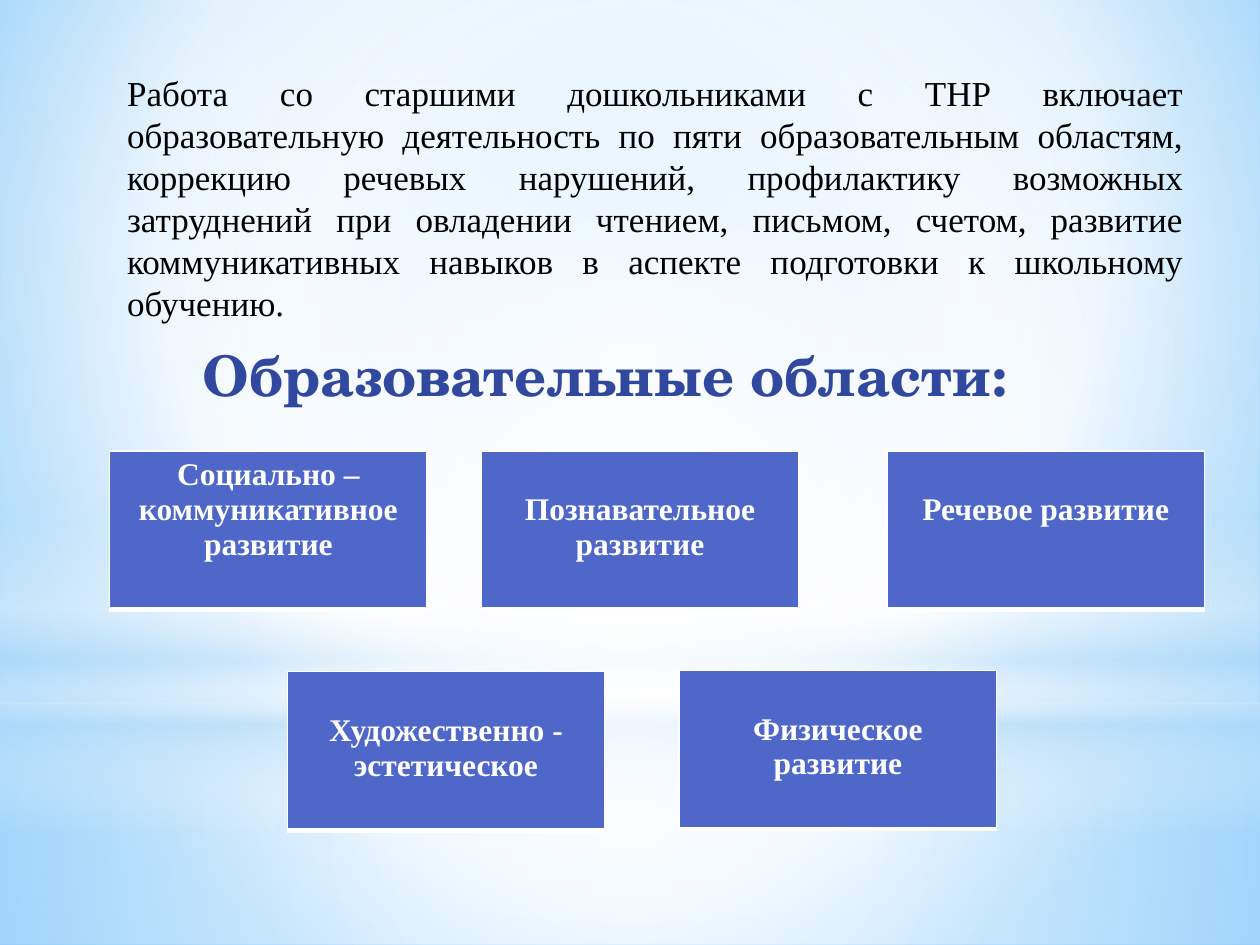
from lxml import etree
from pptx import Presentation
from pptx.dml.color import RGBColor
from pptx.enum import shapes, text
from pptx.oxml import ns
from pptx.util import Inches, Pt

# Content
INTRO = (
    "Работа со старшими дошкольниками с ТНР включает образовательную деятельность "
    "по пяти образовательным областям, коррекцию речевых нарушений, профилактику "
    "возможных затруднений при овладении чтением, письмом, счетом, развитие "
    "коммуникативных навыков в аспекте подготовки к школьному обучению."
)
TITLE = "Образовательные области:"
# Paragraphs, left, top, blank lines above the text
AREAS = [
    (["Социально – коммуникативное", "развитие"], 0.87, 3.58, 0),
    (["Познавательное развитие"], 3.82, 3.58, 1),
    (["Речевое развитие"], 7.04, 3.58, 1),
    (["Художественно - эстетическое"], 2.28, 5.33, 1),
    (["Физическое развитие"], 5.39, 5.32, 1),
]

THEME = {
    "body_font": "Times New Roman", "title_font": "TeX Gyre Schola",
    "black": "000000", "white": "FFFFFF", "title": "31489F",
    "card": "4E67C8", "sky": "B4DCFA", "sky_mid": "9ED5FF", "sky_edge": "5BB9FF",
    "intro_size": 20, "title_size": 32, "card_size": 18,
}
CARD_WIDTH, CARD_HEIGHT, CARD_LINE = 2.52, 1.26, 0.28
BORDERS = {"lnL": 1, "lnR": 1, "lnT": 1, "lnB": 3}

# Gradient stops: position, theme colour, opacity (all in percent)
BACKDROP = [(0, "sky_mid", 100), (60, "white", 100), (100, "sky_edge", 100)]
CENTRE = (50, 50, 50, 50)
RECTANGLE, OVAL = shapes.MSO_SHAPE.RECTANGLE, shapes.MSO_SHAPE.OVAL
# Preset, top, height, stops, focus (None for a vertical gradient)
LAYERS = [
    (RECTANGLE, 5.58, 1.92,
     [(0, "white", 91), (37, "white", 76), (100, "sky", 79)], CENTRE),
    (RECTANGLE, 0, 5.58,
     [(0, "white", 89), (48, "white", 62), (100, "sky", 79)], CENTRE),
    (RECTANGLE, 4.12, 2.5,
     [(0, "white", 0), (29, "white", 30), (45, "sky", 40),
      (55, "white", 26), (65, "sky", 60), (100, "white", 0)], None),
    (OVAL, 1.75, 5.58, [(0, "white", 100), (56, "white", 0)], CENTRE),
]


def add_child(parent, tag, **attributes):
    child = etree.SubElement(parent, ns.qn(tag))
    for name, value in attributes.items():
        child.set(name, str(value))
    return child


def set_gradient(fill, owner, stops, focus):
    """Swap the solid fill of the owner element for a gradient."""
    fill.solid()
    fill.fore_color.rgb = RGBColor.from_string(THEME["white"])
    solid = owner.xpath(".//a:solidFill")[0]
    gradient = etree.Element(ns.qn("a:gradFill"), rotWithShape="1")
    stop_list = add_child(gradient, "a:gsLst")
    for position, colour, opacity in stops:
        stop = add_child(stop_list, "a:gs", pos=position * 1000)
        color = add_child(stop, "a:srgbClr", val=THEME[colour])
        add_child(color, "a:alpha", val=opacity * 1000)
    if focus:
        circle = add_child(gradient, "a:path", path="circle")
        sides = {side: value * 1000 for side, value in zip("ltrb", focus)}
        add_child(circle, "a:fillToRect", **sides)
    else:
        add_child(gradient, "a:lin", ang=90 * 60000, scaled=0)
    solid.getparent().replace(solid, gradient)


def write_text(frame, paragraphs, *, size, colour, font="body_font", bold=False,
               align=text.PP_ALIGN.CENTER):
    frame.word_wrap = True
    for index, wording in enumerate(paragraphs):
        paragraph = frame.paragraphs[0] if index == 0 else frame.add_paragraph()
        paragraph.alignment = align
        run = paragraph.add_run()
        run.text = wording
        run.font.name = THEME[font]
        run.font.size = Pt(THEME[size])
        run.font.bold = bold
        run.font.color.rgb = RGBColor.from_string(THEME[colour])


def add_card(slide, paragraphs, left, top, blank_lines):
    """One area as a single-cell table with a white border."""
    table = slide.shapes.add_table(
        1, 1, Inches(left), Inches(top), Inches(CARD_WIDTH), Inches(CARD_HEIGHT)).table
    cell = table.cell(0, 0)
    cell.margin_top = Inches(0.05 + blank_lines * CARD_LINE)
    write_text(cell.text_frame, paragraphs, size="card_size", colour="white", bold=True)
    properties = cell.fill and cell._tc.get_or_add_tcPr()
    for side, width in BORDERS.items():
        line = add_child(properties, f"a:{side}", w=Pt(width))
        add_child(add_child(line, "a:solidFill"), "a:srgbClr", val=THEME["white"])
    cell.fill.solid()
    cell.fill.fore_color.rgb = RGBColor.from_string(THEME["card"])


def main():
    presentation = Presentation()
    presentation.slide_width, presentation.slide_height = Inches(10), Inches(7.5)
    slide = presentation.slides.add_slide(presentation.slide_layouts[5])

    # Background and its soft layers
    set_gradient(slide.background.fill, slide.element, BACKDROP, (20, 10, 20, 60))
    for preset, top, height, stops, focus in LAYERS:
        layer = slide.shapes.add_shape(
            preset, 0, Inches(top), presentation.slide_width, Inches(height))
        layer.shadow.inherit = False
        layer.line.fill.background()
        set_gradient(layer.fill, layer.element, stops, focus)

    # Introduction
    intro = slide.shapes.add_textbox(
        Inches(0.91), Inches(0.52), Inches(8.58), Inches(2.12))
    write_text(intro.text_frame, [INTRO], size="intro_size", colour="black",
               align=text.PP_ALIGN.JUSTIFY)

    # Title, brought in front of the layers
    title = slide.shapes.title
    title.left, title.top = Inches(1.3), Inches(2.65)
    title.width, title.height = Inches(7), Inches(0.64)
    title.text_frame.auto_size = text.MSO_AUTO_SIZE.NONE
    title.text_frame.vertical_anchor = text.MSO_ANCHOR.TOP
    write_text(title.text_frame, [TITLE], size="title_size", colour="title",
               font="title_font", bold=True)
    intro.element.addnext(title.element)

    # Five areas
    for area in AREAS:
        add_card(slide, *area)

    presentation.save("out.pptx")


if __name__ == "__main__":
    main()
